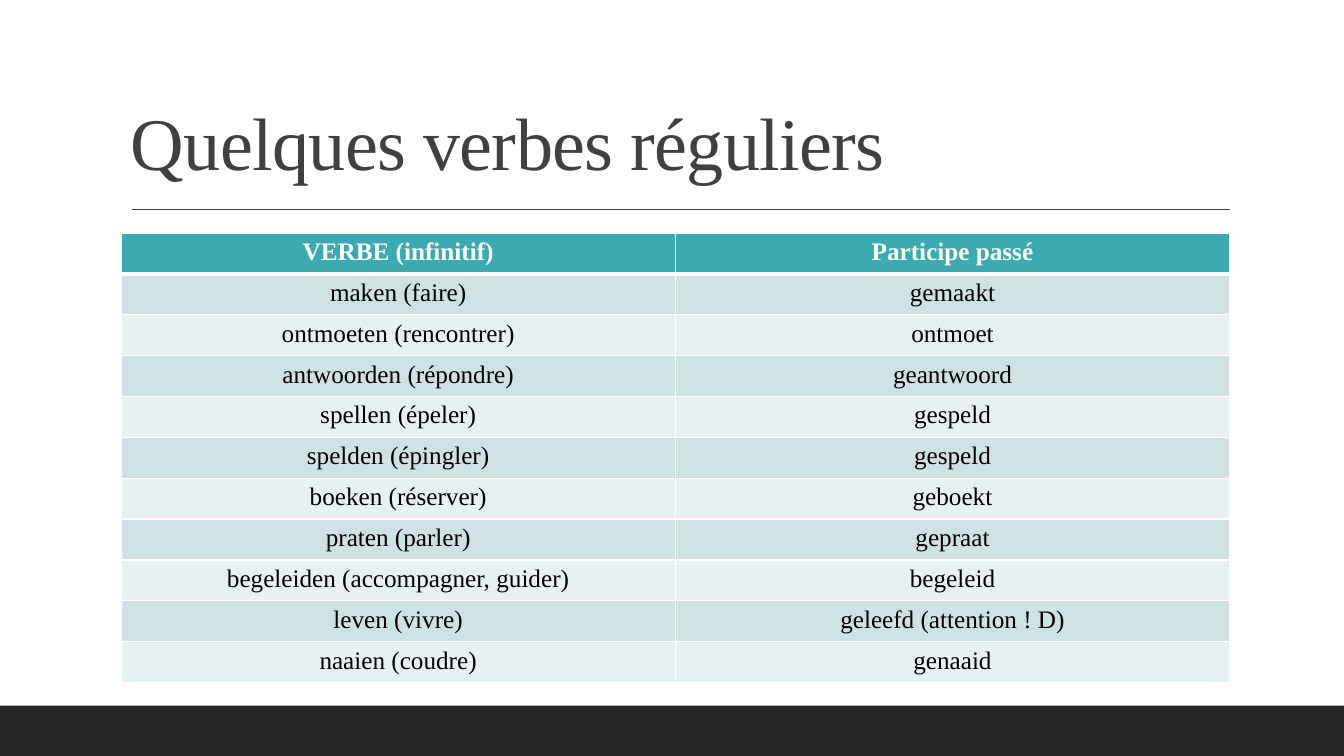
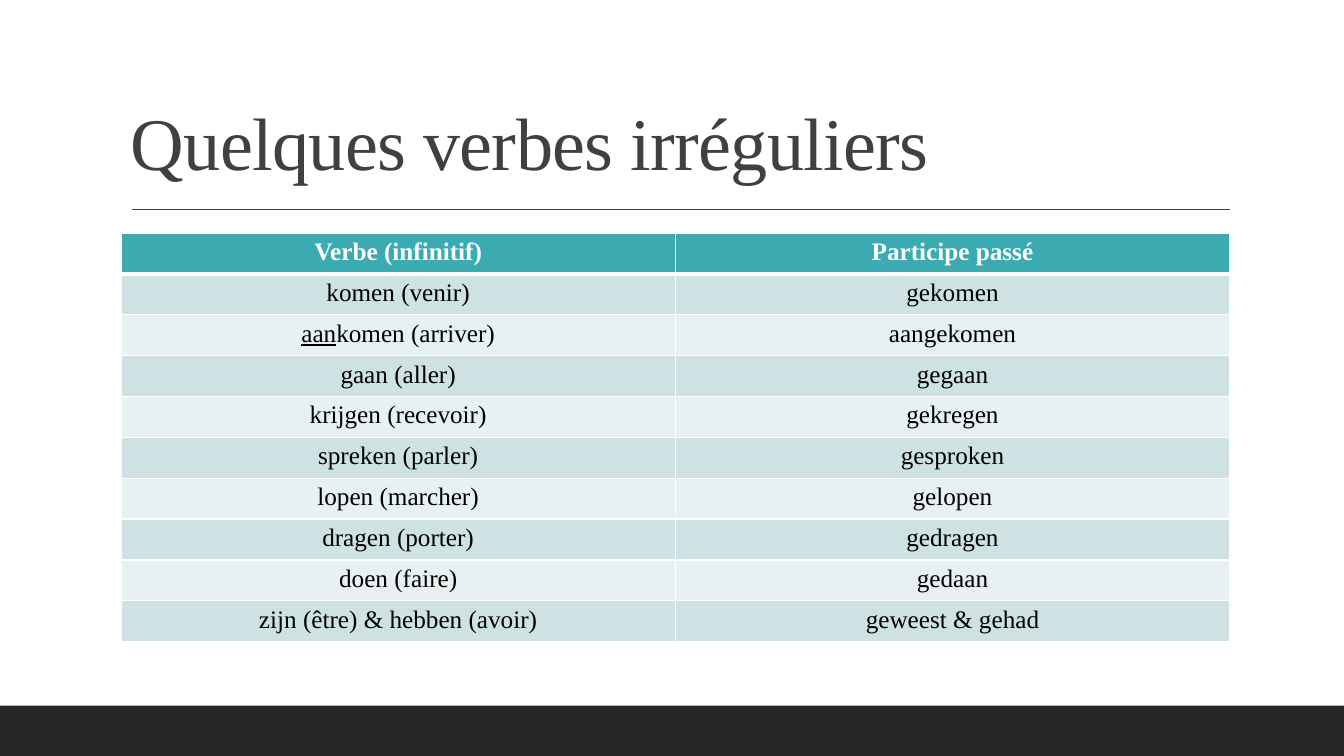
from lxml import etree
from pptx import Presentation
from pptx import util as u
from pptx.dml.color import RGBColor
from pptx.enum import shapes, text
from pptx.oxml import ns

COLORS = {
    "ink": "404040",
    "footer": "262626",
    "header": "3BABB1",
    "odd": "CEE2E4",
    "even": "E8F1F2",
    "white": "FFFFFF",
    "black": "000000",
}
FONT = "Times New Roman"
WIDTH, HEIGHT = u.Cm(33.87), u.Cm(19.05)
LEFT, TABLE_TOP = u.Cm(3.05), u.Cm(5.87)
COLUMN_WIDTH, ROW_HEIGHT = u.Cm(13.97), u.Cm(1.03)
FOOTER_HEIGHT = u.Cm(1.27)

LESSONS = [
    ("Quelques verbes réguliers", [
        ("VERBE (infinitif)", "Participe passé"),
        ("maken (faire)", "gemaakt"),
        ("ontmoeten (rencontrer)", "ontmoet"),
        ("antwoorden (répondre)", "geantwoord"),
        ("spellen (épeler)", "gespeld"),
        ("spelden (épingler)", "gespeld"),
        ("boeken (réserver)", "geboekt"),
        ("praten (parler)", "gepraat"),
        ("begeleiden (accompagner, guider)", "begeleid"),
        ("leven (vivre)", "geleefd (attention ! D)"),
        ("naaien (coudre)", "genaaid"),
    ]),
    ("Quelques verbes irréguliers", [
        ("Verbe (infinitif)", "Participe passé"),
        ("komen (venir)", "gekomen"),
        ("aankomen (arriver)", "aangekomen"),
        ("gaan (aller)", "gegaan"),
        ("krijgen (recevoir)", "gekregen"),
        ("spreken (parler)", "gesproken"),
        ("lopen (marcher)", "gelopen"),
        ("dragen (porter)", "gedragen"),
        ("doen (faire)", "gedaan"),
        ("zijn (être) & hebben (avoir)", "geweest & gehad"),
    ]),
]
SEPARABLE = {"aankomen (arriver)": "aan"}


def style_run(run, size, color, bold=False):
    run.font.name = FONT
    run.font.size = u.Pt(size)
    run.font.bold = bold
    run.font.color.rgb = RGBColor.from_string(COLORS[color])


def add_borders(cell, top, bottom):
    properties = cell._tc.get_or_add_tcPr()
    for side, points in (("L", 1), ("R", 1), ("T", top), ("B", bottom)):
        border = etree.SubElement(properties, ns.qn(f"a:ln{side}"), w=str(u.Pt(points)))
        fill = etree.SubElement(border, ns.qn("a:solidFill"))
        etree.SubElement(fill, ns.qn("a:srgbClr"), val=COLORS["white"])


deck = Presentation()
deck.slide_width, deck.slide_height = WIDTH, HEIGHT

for heading, verbs in LESSONS:
    slide = deck.slides.add_slide(deck.slide_layouts[6])

    footer = slide.shapes.add_shape(
        shapes.MSO_SHAPE.RECTANGLE, 0, HEIGHT - FOOTER_HEIGHT, WIDTH, FOOTER_HEIGHT)
    footer.shadow.inherit = False
    footer.fill.solid()
    footer.fill.fore_color.rgb = RGBColor.from_string(COLORS["footer"])
    footer.line.fill.background()

    rule = slide.shapes.add_connector(
        shapes.MSO_CONNECTOR.STRAIGHT, u.Cm(3.32), u.Cm(5.28), u.Cm(31), u.Cm(5.28))
    rule.line.color.rgb = RGBColor.from_string(COLORS["ink"])
    rule.line.width = u.Pt(1)
    etree.SubElement(rule._element.spPr, ns.qn("a:effectLst"))

    title = slide.shapes.add_textbox(LEFT, u.Cm(0.8), 2 * COLUMN_WIDTH, u.Cm(4.03)).text_frame
    title.word_wrap = True
    title.vertical_anchor = text.MSO_ANCHOR.BOTTOM
    title.text = heading
    title.paragraphs[0].line_spacing = 0.9
    title_run = title.paragraphs[0].runs[0]
    style_run(title_run, 53, "ink")
    title_run._r.get_or_add_rPr().set("spc", "-50")

    table = slide.shapes.add_table(
        len(verbs), 2, LEFT, TABLE_TOP, 2 * COLUMN_WIDTH, len(verbs) * ROW_HEIGHT).table
    for column in table.columns:
        column.width = COLUMN_WIDTH

    for row, forms in enumerate(verbs):
        table.rows[row].height = ROW_HEIGHT
        is_header = row == 0
        band = "header" if is_header else ("even", "odd")[row % 2]
        for col, form in enumerate(forms):
            cell = table.cell(row, col)
            add_borders(cell, top=3 if row == 1 else 1, bottom=3 if is_header else 1)
            cell.fill.solid()
            cell.fill.fore_color.rgb = RGBColor.from_string(COLORS[band])
            entry = cell.text_frame.paragraphs[0]
            entry.alignment = text.PP_ALIGN.CENTER
            prefix = SEPARABLE.get(form, "")
            entry.text = prefix or form
            if prefix:
                entry.runs[0].font.underline = True
                entry.add_run().text = form.removeprefix(prefix)
            for run in entry.runs:
                style_run(run, 18, "white" if is_header else "black", is_header)

deck.save("out.pptx")
